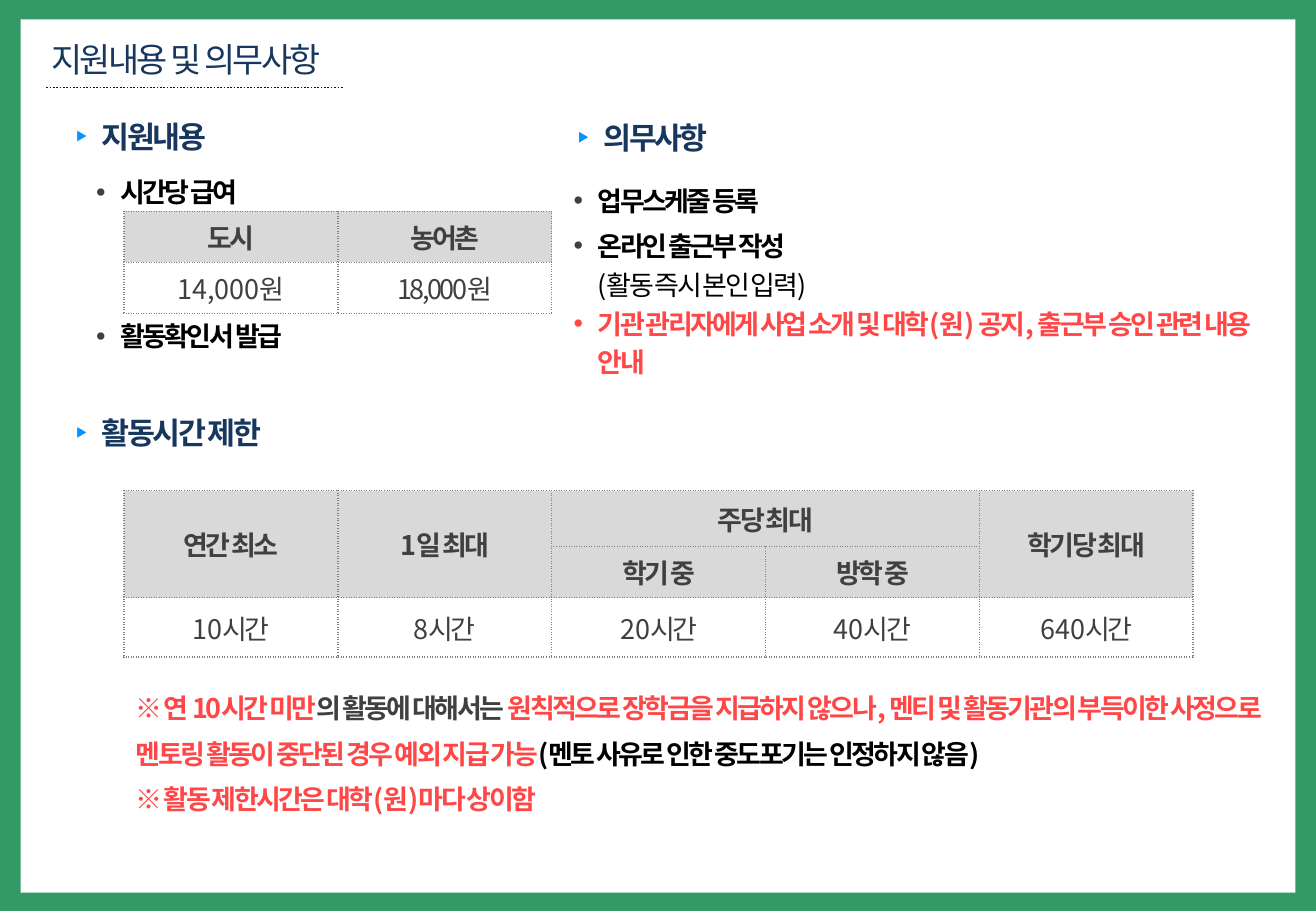
"""Build the slide on mentoring support, duties and activity time limits."""
from lxml import etree
from pptx import Presentation
from pptx.dml.color import RGBColor
from pptx.enum.dml import MSO_LINE
from pptx.enum.shapes import MSO_CONNECTOR, MSO_SHAPE
from pptx.enum.text import MSO_ANCHOR, MSO_AUTO_SIZE, PP_ALIGN
from pptx.oxml.ns import qn
from pptx.util import Emu, Inches, Pt

RECTANGLE, TRIANGLE = MSO_SHAPE.RECTANGLE, MSO_SHAPE.ISOSCELES_TRIANGLE
STRAIGHT, DOTTED = MSO_CONNECTOR.STRAIGHT, MSO_LINE.ROUND_DOT
TOP, MIDDLE = MSO_ANCHOR.TOP, MSO_ANCHOR.MIDDLE
LEFT, CENTER = PP_ALIGN.LEFT, PP_ALIGN.CENTER
NO_FIT = MSO_AUTO_SIZE.NONE

FONT = "Noto Sans CJK KR"
NAVY, RED, GRAY, BLACK, WHITE = "17375E", "FF4747", "404040", "000000", "FFFFFF"
TIGHT = -1.5
COLUMN = 1.76
TABLE_LEFT = 1.02
color = RGBColor.from_string


def write(paragraph, runs, size=16, bold=True):
    """Add (text, colour, letter spacing) runs to a paragraph."""
    for text, hue, spacing in runs:
        run = paragraph.add_run()
        run.text = text
        run.font.size, run.font.bold, run.font.name = Pt(size), bold, FONT
        run.font.color.rgb = color(hue)
        properties = run.font._element
        properties.set("spc", str(int(spacing * 100)))
        etree.SubElement(properties, qn("a:ea")).set("typeface", FONT)


def place(shape, left, top, width, height):
    """Move a text shape and prepare its frame."""
    shape.left, shape.top = Inches(left), Inches(top)
    shape.width, shape.height = Inches(width), Inches(height)
    frame = shape.text_frame
    frame.word_wrap, frame.auto_size = True, NO_FIT
    frame.vertical_anchor = TOP
    return frame


prs = Presentation()
prs.slide_width, prs.slide_height = Inches(10.83), Inches(7.5)
slide = prs.slides.add_slide(prs.slide_layouts[3])
shapes = slide.shapes
title, benefits, duties = slide.placeholders
slide.background.fill.solid()
slide.background.fill.fore_color.rgb = color("339966")

panel = shapes.add_shape(RECTANGLE, Inches(0.17), Inches(0.16), Inches(10.49), Inches(7.19))
panel.shadow.inherit = False
panel.fill.solid()
panel.fill.fore_color.rgb = color(WHITE)
panel.line.fill.background()
shapes._spTree.remove(panel._element)
shapes._spTree.insert(2, panel._element)

title_line = place(title, 0.32, 0.27, 4, 0.44).paragraphs[0]
title_line.alignment = LEFT
write(title_line, [("지원내용 및 의무사항", NAVY, TIGHT)], 20, False)

underline = shapes.add_connector(STRAIGHT, Inches(0.38), Inches(0.72), Inches(2.82), Inches(0.72))
underline.line.color.rgb = color("001746")
underline.line.width, underline.line.dash_style = Pt(1), DOTTED
etree.SubElement(underline._element.spPr, qn("a:effectLst"))

for heading, left, top in [
    ("지원내용", 0.61, 0.92),
    ("활동시간 제한", 0.61, 3.36),
    ("의무사항", 4.74, 0.93),
]:
    group = shapes.add_group_shape().shapes
    label = group.add_textbox(0, 0, 0, 0)
    write(place(label, left + 0.13, top, 2, 0.4).paragraphs[0], [(heading, NAVY, TIGHT)], 18)
    marker = group.add_shape(TRIANGLE, Inches(left), Inches(top + 0.14), Inches(0.14), Inches(0.12))
    marker.rotation = 90
    marker.shadow.inherit = False
    marker.fill.solid()
    marker.fill.fore_color.rgb = color("0594FF")
    marker.line.color.rgb = color(WHITE)
    marker.line.width = Pt(2)

benefit_items = [
    ("시간당 급여", BLACK, GRAY, 1.4, 0),
    ("활동확인서 발급", BLACK, GRAY, 1.4, 58.5),
]
duty_items = [
    ("업무스케줄 등록", BLACK, GRAY, 1.4, 0),
    ("온라인 출근부 작성", BLACK, GRAY, 1.4, 0),
    ("(활동 즉시 본인 입력)", BLACK, None, 1.2, 0),
    ("기관 관리자에게 사업 소개 및 대학(원) 공지, 출근부 승인 관련 내용 안내", RED, RED, 1.2, 0),
]
for holder, box, items in [
    (benefits, (0.69, 1.29, 5, 1.69), benefit_items),
    (duties, (4.62, 1.36, 6.02, 1.9), duty_items),
]:
    frame = place(holder, *box)
    for index, (text, hue, bullet, spacing, before) in enumerate(items):
        item = frame.add_paragraph() if index else frame.paragraphs[0]
        layout = item._p.get_or_add_pPr()
        layout.set("marL", str(Inches(0.2)))
        layout.set("indent", str(-Inches(0.2) if bullet else 0))
        if bullet:
            bullet_color = etree.SubElement(layout, qn("a:buClr"))
            etree.SubElement(bullet_color, qn("a:srgbClr")).set("val", bullet)
            etree.SubElement(layout, qn("a:buFont")).set("typeface", "Arial")
            etree.SubElement(layout, qn("a:buChar")).set("char", "•")
        else:
            etree.SubElement(layout, qn("a:buNone"))
        item.line_spacing, item.space_before = spacing, Pt(before)
        write(item, [(text, hue, TIGHT)], bold=bullet is not None)

limit_rows = [
    ["연간 최소", "1일 최대", "주당 최대", "", "학기당 최대"],
    ["", "", "학기 중", "방학 중", ""],
    [[("10", 0), ("시간", TIGHT)], "8시간", [("20", 0), ("시간", TIGHT)],
     [("40", 0), ("시간", TIGHT)], [("640", 0), ("시간", TIGHT)]],
]
limit_merges = [(0, 0, 1, 0), (0, 1, 1, 1), (0, 2, 0, 3), (0, 4, 1, 4)]
pay_rows = [["도시", "농어촌"], [[("14,000원", 0)], "18,000원"]]

for rows, top, heights, merges in [
    (limit_rows, 4.04, [0.46, 0.37, 0.49], limit_merges),
    (pay_rows, 1.74, [0.37, 0.38], []),
]:
    columns = len(rows[0])
    table = shapes.add_table(len(rows), columns, Inches(TABLE_LEFT), Inches(top),
                             Inches(COLUMN * columns), Inches(sum(heights))).table
    for row_index, (row, height) in enumerate(zip(rows, heights)):
        table.rows[row_index].height = Inches(height)
        is_header = row_index < len(rows) - 1
        for column_index, content in enumerate(row):
            cell = table.cell(row_index, column_index)
            cell.vertical_anchor = MIDDLE
            if is_header:
                cell.fill.solid()
                cell.fill.fore_color.rgb = color("D9D9D9")
            else:
                cell.fill.background()
            for position, side in enumerate(["lnL", "lnR", "lnT", "lnB"]):
                border = etree.Element(qn(f"a:{side}"), w=str(Emu(Pt(1))))
                stroke = etree.SubElement(border, qn("a:solidFill"))
                etree.SubElement(stroke, qn("a:srgbClr")).set("val", "808080")
                etree.SubElement(border, qn("a:prstDash")).set("val", "sysDot")
                cell._tc.get_or_add_tcPr().insert(position, border)
            if content:
                parts = [(content, TIGHT)] if isinstance(content, str) else content
                line = cell.text_frame.paragraphs[0]
                line.alignment = CENTER
                write(line, [(text, GRAY, spacing) for text, spacing in parts], bold=is_header)
    for first_row, first_column, last_row, last_column in merges:
        table.cell(first_row, first_column).merge(table.cell(last_row, last_column))

notes = [
    [("※ 연 10시간 미만", RED, TIGHT),
     ("의 활동에 대해서는", GRAY, TIGHT),
     (" 원칙적으로 장학금을 지급하지 않으나, 멘티 및 활동기관의 부득이한 사정으로 "
      "멘토링 활동이 중단된 경우 예외 지급 가능", RED, TIGHT),
     ("(멘토 사유로 인한 중도포기는 인정하지 않음)", BLACK, TIGHT)],
    [("※ 활동 제한시간은 대학(원)마다 상이함", RED, TIGHT)],
]
notes_frame = place(shapes.add_textbox(0, 0, 0, 0), TABLE_LEFT, 5.54, 9.52, 1.19)
for index, note in enumerate(notes):
    line = notes_frame.add_paragraph() if index else notes_frame.paragraphs[0]
    line.line_spacing = 1.4
    write(line, note)

prs.save("out.pptx")
